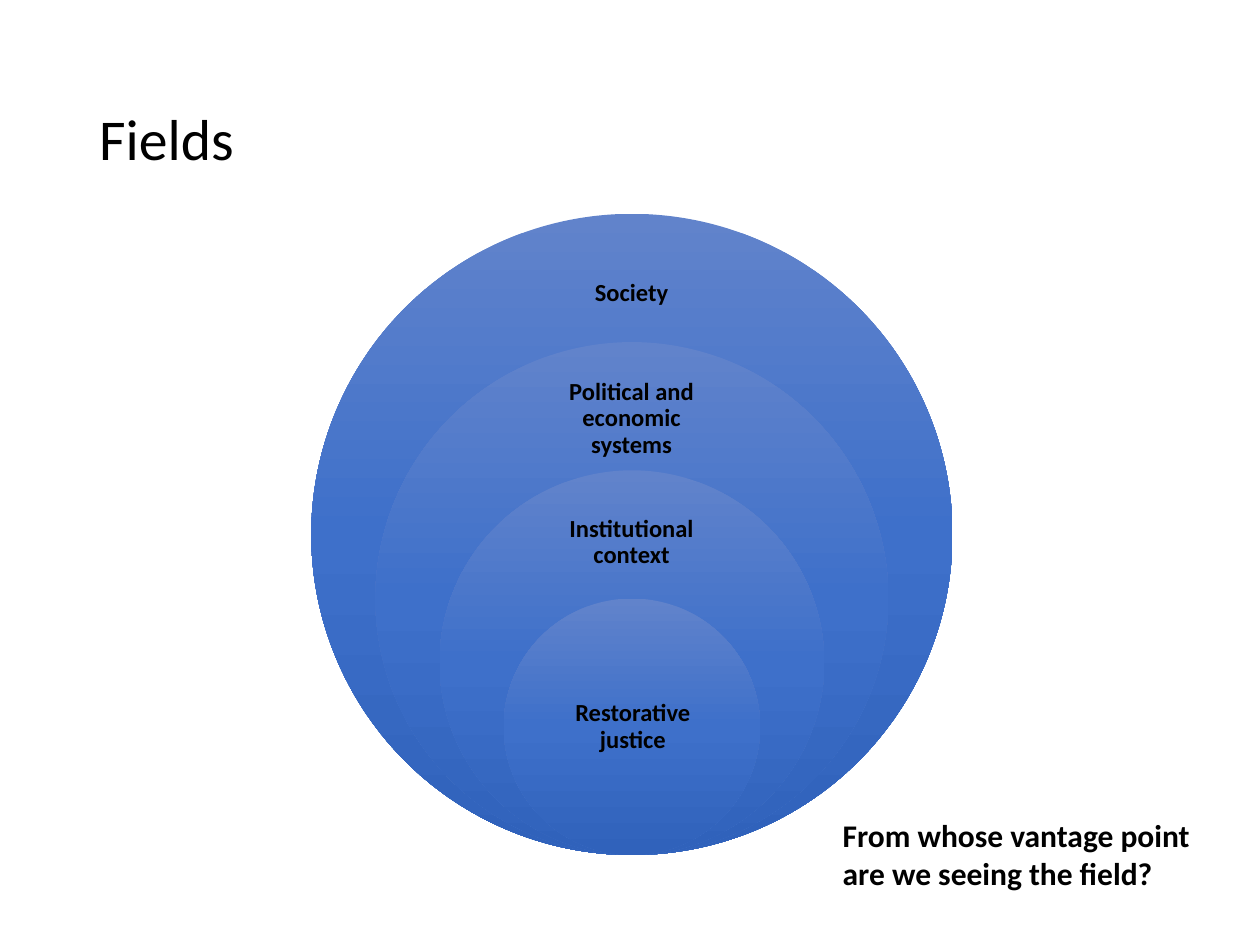
"""Build the "Fields" slide: nested circles of social context."""
import copy

import pptx
import pptx.dml.color
import pptx.enum.shapes
import pptx.enum.text
import pptx.oxml.ns
import pptx.util

Pt = pptx.util.Pt
BLACK = pptx.dml.color.RGBColor(0x00, 0x00, 0x00)
BLUE_TOP = pptx.dml.color.RGBColor(0x61, 0x83, 0xCB)
BLUE_MIDDLE = pptx.dml.color.RGBColor(0x3E, 0x70, 0xCA)
BLUE_BOTTOM = pptx.dml.color.RGBColor(0x30, 0x62, 0xBB)
GRADIENT = [(0, BLUE_TOP), (0.5, BLUE_MIDDLE), (1, BLUE_BOTTOM)]

OUTER_DIAMETER = 366.4
CENTER_X = 361.1
CIRCLES_BOTTOM = 488.6
LABEL_LEFT = 309.8
LABEL_INSET = Pt(8)
FIELDS = [
    ("Society", 140.4, 102.2, 54.7),
    ("Political and economic systems", 213.1, 102.2, 52.6),
    ("Institutional context", 285.1, 102.2, 49.7),
    ("Restorative justice", 378.7, 103.7, 73.4),
]


def add_text(paragraph, text, size, bold=True):
    run = paragraph.add_run()
    run.text = text
    run.font.name = "Calibri"
    run.font.size = Pt(size)
    run.font.bold = bold
    run.font.color.rgb = BLACK


presentation = pptx.Presentation()
presentation.slide_width = Pt(720)
presentation.slide_height = Pt(540)
slide = presentation.slides.add_slide(presentation.slide_layouts[5])

title = slide.shapes.title
title.left, title.top, title.width, title.height = Pt(49.5), Pt(28.8), Pt(621), Pt(104.4)
title.text_frame.vertical_anchor = pptx.enum.text.MSO_ANCHOR.MIDDLE
heading = title.text_frame.paragraphs[0]
heading.alignment = pptx.enum.text.PP_ALIGN.LEFT
heading.line_spacing = 0.9
add_text(heading, "Fields", 33, bold=False)

nested_fields = slide.shapes.add_group_shape()
for level, (name, label_top, label_width, label_height) in enumerate(FIELDS):
    diameter = OUTER_DIAMETER * (1 - level / 5)
    circle = nested_fields.shapes.add_shape(
        pptx.enum.shapes.MSO_SHAPE.OVAL,
        Pt(CENTER_X - diameter / 2), Pt(CIRCLES_BOTTOM - diameter),
        Pt(diameter), Pt(diameter),
    )
    circle.shadow.inherit = False
    circle.line.fill.background()
    circle.fill.gradient()
    circle.fill.gradient_angle = 270
    stops = circle._element.spPr.find(".//" + pptx.oxml.ns.qn("a:gsLst"))
    stops.insert(1, copy.deepcopy(stops[0]))
    for stop, (position, color) in zip(circle.fill.gradient_stops, GRADIENT):
        stop.position = position
        stop.color.rgb = color

    label = nested_fields.shapes.add_textbox(
        Pt(LABEL_LEFT), Pt(label_top), Pt(label_width), Pt(label_height)
    ).text_frame
    label.word_wrap = True
    label.vertical_anchor = pptx.enum.text.MSO_ANCHOR.MIDDLE
    label.margin_left = label.margin_right = LABEL_INSET
    label.margin_top = label.margin_bottom = LABEL_INSET
    caption = label.paragraphs[0]
    caption.alignment = pptx.enum.text.PP_ALIGN.CENTER
    caption.line_spacing = 0.9
    add_text(caption, name, 14)

question = slide.shapes.add_textbox(Pt(474.5), Pt(463), Pt(256.3), Pt(51)).text_frame
question.word_wrap = True
add_text(question.paragraphs[0], "From whose vantage point", 18)
add_text(question.add_paragraph(), "are we seeing the field?", 18)

presentation.save("out.pptx")
